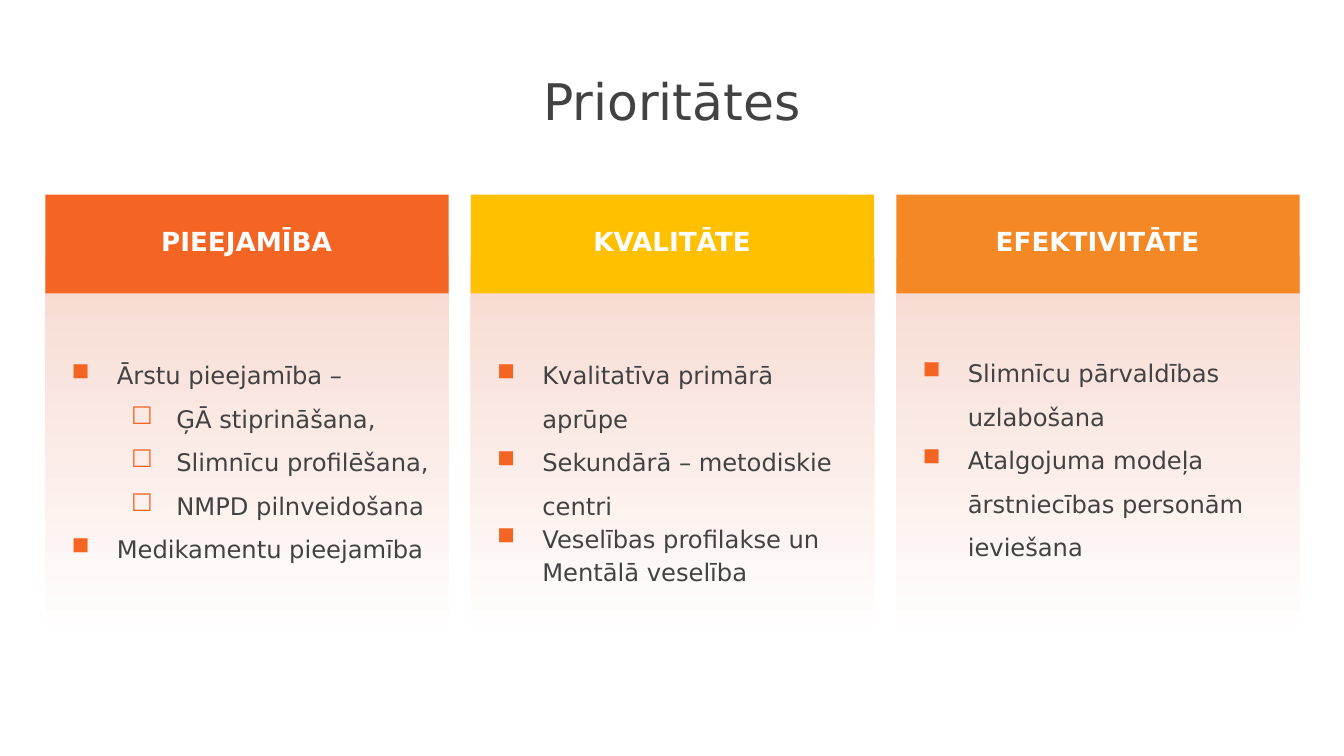
from dataclasses import dataclass

from lxml import etree
from pptx import Presentation
from pptx import util as u
from pptx.dml.color import RGBColor
from pptx.enum import shapes, text
from pptx.oxml import ns


@dataclass(frozen=True)
class Theme:
    font: str = "DejaVu Sans"
    ink: str = "424242"
    white: str = "FFFFFF"
    blush: str = "F7D5CB"
    orange: str = "F46524"
    yellow: str = "FFC000"
    amber: str = "F48824"
    title_size: float = 36
    heading_size: float = 18.7
    body_size: float = 17.3
    panel_opacity: int = 90


# Bullet character and left margin for each level
BULLETS = [("■", 0.58), ("☐", 1.17)]
HANGING = 0.45


def add_xml(parent, tag, **attributes):
    return etree.SubElement(parent, ns.qn(tag), attributes)


class SlideBuilder:
    def __init__(self, slide, theme):
        self.slide = slide
        self.theme = theme

    def place(self, shape, left, top, width, height):
        box = {"left": left, "top": top, "width": width, "height": height}
        for name, value in box.items():
            setattr(shape, name, u.Inches(value))

    def frame(self, shape, inset_x, inset_y, anchor):
        formats = {
            "word_wrap": True,
            "auto_size": text.MSO_AUTO_SIZE.NONE,
            "vertical_anchor": anchor,
            "margin_left": u.Inches(inset_x),
            "margin_right": u.Inches(inset_x),
            "margin_top": u.Inches(inset_y),
            "margin_bottom": u.Inches(inset_y),
        }
        for name, value in formats.items():
            setattr(shape.text_frame, name, value)
        return shape.text_frame

    def add_words(self, paragraph, words, size, color, bold=False, **formats):
        for name, value in formats.items():
            setattr(paragraph, name, value)
        run = paragraph.add_run()
        run.text = words
        font = {"name": self.theme.font, "size": u.Pt(size), "bold": bold}
        for name, value in font.items():
            setattr(run.font, name, value)
        run.font.color.rgb = RGBColor.from_string(color)

    def title(self, words):
        shape = self.slide.shapes.title
        self.place(shape, 0, 0.64, 13.33, 0.72)
        frame = self.frame(shape, 0.1, 0.05, text.MSO_ANCHOR.MIDDLE)
        self.add_words(frame.paragraphs[0], words, self.theme.title_size,
                       self.theme.ink, alignment=text.PP_ALIGN.CENTER)

    def rectangle(self, left, top, width, height):
        shape = self.slide.shapes.add_shape(
            shapes.MSO_SHAPE.RECTANGLE,
            *map(u.Inches, (left, top, width, height)))
        shape.shadow.inherit = False
        shape.line.fill.background()
        return shape

    def panel(self, *box):
        shape = self.rectangle(*box)
        shape.rotation = 180
        shape.fill.gradient()
        shape.fill.gradient_angle = 270
        colors = (self.theme.white, self.theme.blush)
        for stop, position, color in zip(shape.fill.gradient_stops, (0, 1), colors):
            stop.position = position
            stop.color.rgb = RGBColor.from_string(color)
        for color in list(shape.element.spPr.iter(ns.qn("a:srgbClr"))):
            add_xml(color, "a:alpha", val=str(self.theme.panel_opacity * 1000))

    def band(self, color, *box):
        shape = self.rectangle(*box)
        shape.fill.solid()
        shape.fill.fore_color.rgb = RGBColor.from_string(color)

    def textbox(self, anchor, *box):
        shape = self.slide.shapes.add_textbox(*map(u.Inches, box))
        return self.frame(shape, 0.13, 0.13, anchor)

    def heading(self, words, *box):
        frame = self.textbox(text.MSO_ANCHOR.MIDDLE, *box)
        self.add_words(frame.paragraphs[0], words, self.theme.heading_size,
                       self.theme.white, bold=True, line_spacing=0.9,
                       alignment=text.PP_ALIGN.CENTER)

    def bullets(self, items, *box):
        frame = self.textbox(text.MSO_ANCHOR.TOP, *box)
        for index, (level, words, spacing) in enumerate(items):
            paragraph = frame.add_paragraph() if index else frame.paragraphs[0]
            character, margin = BULLETS[level]
            properties = paragraph._p.get_or_add_pPr()
            properties.set("marL", str(u.Inches(margin)))
            properties.set("indent", str(u.Inches(-HANGING)))
            color = add_xml(properties, "a:buClr")
            add_xml(color, "a:srgbClr", val=self.theme.orange)
            add_xml(properties, "a:buChar", char=character)
            self.add_words(paragraph, words, self.theme.body_size, self.theme.ink,
                           level=level, line_spacing=spacing)


def main():
    theme = Theme()
    presentation = Presentation()
    presentation.slide_width = u.Inches(13.33)
    presentation.slide_height = u.Inches(7.5)
    slide = presentation.slides.add_slide(presentation.slide_layouts[5])
    builder = SlideBuilder(slide, theme)
    builder.title("Prioritātes")

    # Heading, colour, list top, and items as (level, words, line spacing)
    columns = [
        ("PIEEJAMĪBA", theme.orange, 3.3, [
            (0, "Ārstu pieejamība –", 1.5),
            (1, "ĢĀ stiprināšana,", 1.5),
            (1, "Slimnīcu profilēšana,", 1.5),
            (1, "NMPD pilnveidošana", 1.5),
            (0, "Medikamentu pieejamība", 1.5),
        ]),
        ("KVALITĀTE", theme.yellow, 3.3, [
            (0, "Kvalitatīva primārā aprūpe", 1.5),
            (0, "Sekundārā – metodiskie centri", 1.5),
            (0, "Veselības profilakse un Mentālā veselība", 1.15),
        ]),
        ("EFEKTIVITĀTE", theme.amber, 3.28, [
            (0, "Slimnīcu pārvaldības uzlabošana", 1.5),
            (0, "Atalgojuma modeļa ārstniecības personām ieviešana", 1.5),
        ]),
    ]

    # Three equal columns
    first_left, width, pitch = 0.45, 4, 4.22
    for index, (heading, color, list_top, items) in enumerate(columns):
        left = first_left + index * pitch
        builder.panel(left, 2.55, width, 3.8)
        builder.band(color, left, 1.93, width, 0.98)
        builder.heading(heading, left + 0.6, 2.14, 2.79, 0.55)
        builder.bullets(items, left, list_top, width, 2.72)

    presentation.save("out.pptx")


if __name__ == "__main__":
    main()
